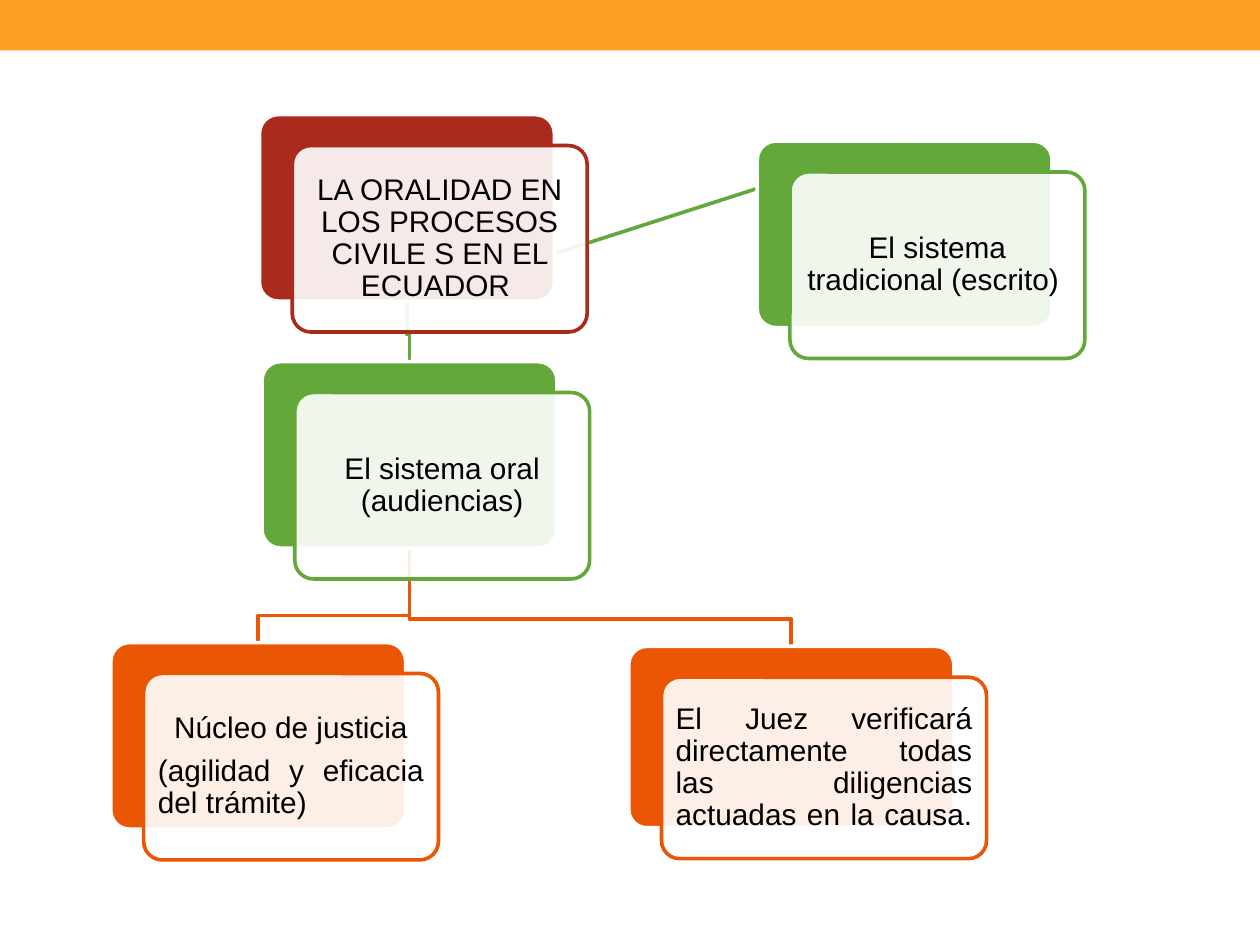
"""Builds a slide with a tree of stacked cards on orality in civil proceedings."""
from lxml.etree import SubElement
from pptx import Presentation
from pptx.dml.color import RGBColor
from pptx.enum.shapes import MSO_CONNECTOR, MSO_SHAPE
from pptx.enum.text import MSO_ANCHOR, PP_ALIGN
from pptx.oxml.ns import qn
from pptx.util import Inches, Pt

AMBER = RGBColor(0xFD, 0xA0, 0x23)
RED = RGBColor(0xAA, 0x2B, 0x1E)
GREEN = RGBColor(0x64, 0xA7, 0x3B)
ORANGE = RGBColor(0xEB, 0x56, 0x05)
WHITE = RGBColor(0xFF, 0xFF, 0xFF)
BLACK = RGBColor(0x00, 0x00, 0x00)
CENTER, JUSTIFY = PP_ALIGN.CENTER, PP_ALIGN.JUSTIFY


class CardTree:
    """Style and current page, measured on a grid of 100 columns by 75 rows."""

    font, size, stroke = "Arial", Pt(17), Pt(2.08)
    offset_columns, offset_rows, elbow_rows = 2.6, 2.45, 2.15

    def __init__(self, deck):
        self.page = deck.slides.add_slide(deck.slide_layouts[6])
        self.column = deck.slide_width / 100
        self.row = deck.slide_height / 75

    def block(self, kind, left, top, width, height, fill):
        """Add a filled preset shape."""
        box = self.page.shapes.add_shape(
            kind, round(left * self.column), round(top * self.row),
            round(width * self.column), round(height * self.row))
        box.shadow.inherit = False
        box.fill.solid()
        box.fill.fore_color.rgb = fill
        box.line.fill.background()
        return box

    def panel(self, left, top, width, height, fill, outline):
        """Add a rounded, outlined rectangle."""
        box = self.block(MSO_SHAPE.ROUNDED_RECTANGLE, left, top, width, height, fill)
        box.adjustments[0] = 0.1
        self.outline(box, outline)
        return box

    def outline(self, shape, color):
        """Give a shape the common line."""
        shape.line.color.rgb = color
        shape.line.width = self.stroke

    def card(self, left, top, color, paragraphs, width=23.4, height=14.8):
        """Add a coloured panel with a translucent text panel over it; return the former."""
        back = self.panel(left, top, width, height, color, WHITE)
        front = self.panel(left + self.offset_columns, top + self.offset_rows,
                           width, height, WHITE, color)
        tint = front.element.spPr.find(qn("a:solidFill"))[0]
        SubElement(tint, qn("a:alpha"), val="90000")
        self.set_text(front.text_frame, paragraphs)
        return back

    def set_text(self, frame, paragraphs):
        """Fill a text frame with (text, alignment) pairs."""
        frame.word_wrap = True
        frame.vertical_anchor = MSO_ANCHOR.MIDDLE
        frame.margin_left = frame.margin_right = Inches(0.07)
        frame.margin_top = frame.margin_bottom = Inches(0.07)
        frame.text = "\n".join(text for text, _ in paragraphs)
        for para, (_, alignment) in zip(frame.paragraphs, paragraphs):
            para.alignment = alignment
            para.line_spacing = 0.9
            para.space_after = Pt(6)
            for span in para.runs:
                span.font.name = self.font
                span.font.size = self.size
                span.font.color.rgb = BLACK

    def send_behind_cards(self, link):
        """Move a link just above the top band."""
        self.page.shapes.element.insert(3, link.element)

    def straight_link(self, parent, child, color):
        """Join the bottom of one card to the top of another."""
        link = self.page.shapes.add_connector(MSO_CONNECTOR.STRAIGHT, 0, 0, 0, 0)
        link.begin_connect(parent, 2)
        link.end_connect(child, 0)
        self.outline(link, color)
        SubElement(link.element.spPr, qn("a:effectLst"))
        self.send_behind_cards(link)

    def elbow_link(self, parent, child, color):
        """Draw a stepped line from the bottom of one card to the top of another."""
        start = parent.left + parent.width // 2
        end = child.left + child.width // 2
        bend = round(child.top - self.elbow_rows * self.row)
        builder = self.page.shapes.build_freeform(start, parent.top + parent.height)
        builder.add_line_segments([(start, bend), (end, bend), (end, child.top)], close=False)
        link = builder.convert_to_shape()
        link.shadow.inherit = False
        link.fill.background()
        self.outline(link, color)
        self.send_behind_cards(link)


def main():
    """Build and save the deck."""
    deck = Presentation()
    deck.slide_width, deck.slide_height = Inches(10), Inches(7.5)
    tree = CardTree(deck)
    tree.block(MSO_SHAPE.RECTANGLE, 0, 0, 100, 4, AMBER)

    topic = tree.card(20.6, 9.1, RED, [
        ("LA ORALIDAD EN LOS PROCESOS CIVILE S EN EL ECUADOR ", CENTER)])
    oral = tree.card(20.8, 28.7, GREEN, [("El sistema oral (audiencias)", CENTER)])
    justice = tree.card(8.8, 51, ORANGE, [
        ("Núcleo de justicia", CENTER),
        ("(agilidad y eficacia del trámite)", JUSTIFY)])
    judge = tree.card(49.9, 51.3, ORANGE, [
        ("El Juez verificará directamente todas las diligencias actuadas en la causa. ",
         JUSTIFY)], width=25.8, height=14.4)
    written = tree.card(60.1, 11.2, GREEN, [
        ("El sistema tradicional (escrito)  ", CENTER)])

    tree.elbow_link(topic, oral, GREEN)
    tree.elbow_link(oral, justice, ORANGE)
    tree.elbow_link(oral, judge, ORANGE)
    tree.straight_link(topic, written, GREEN)
    deck.save("out.pptx")


if __name__ == "__main__":
    main()
